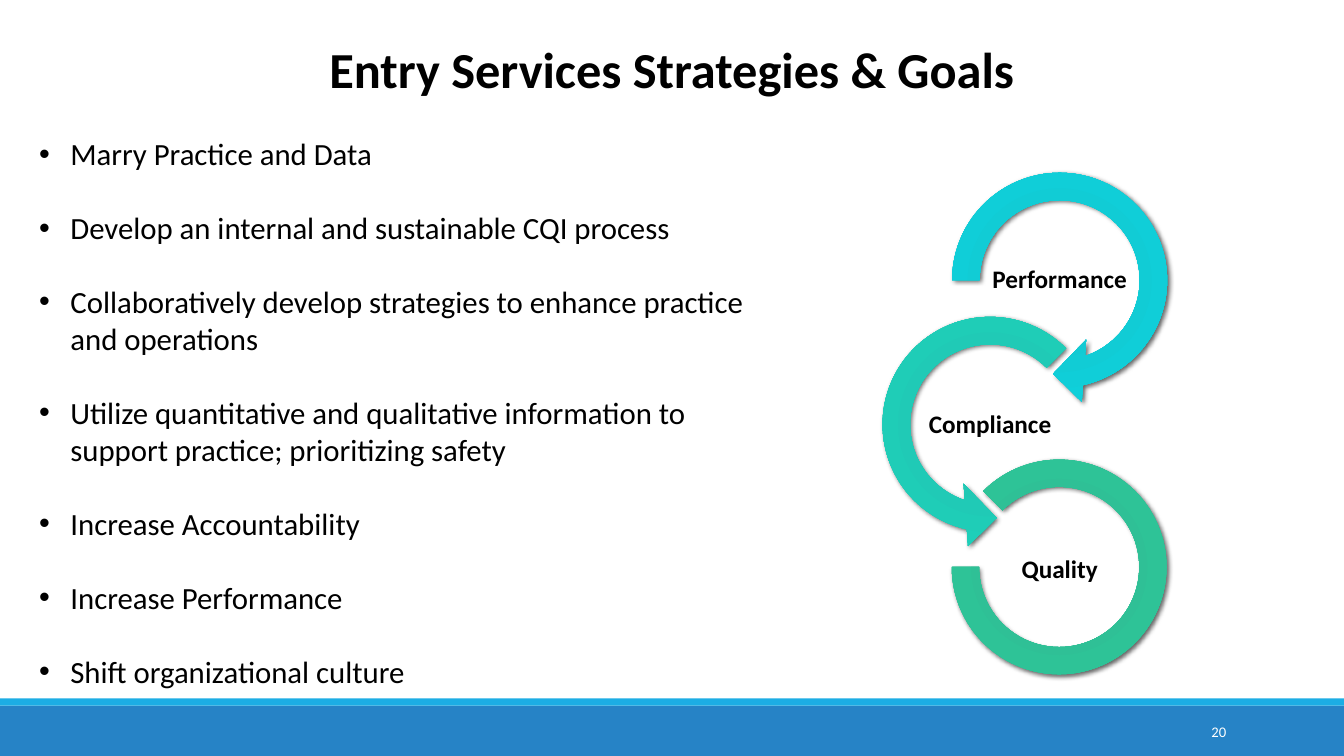
import lxml.etree
import pptx
import pptx.dml.color
import pptx.enum.shapes
import pptx.enum.text
import pptx.oxml.ns
import pptx.util

EMU_PER_PX = 9144
SHAPE = pptx.enum.shapes.MSO_SHAPE
ALIGN = pptx.enum.text.PP_ALIGN
ANCHOR = pptx.enum.text.MSO_ANCHOR

THEME = {
    "font": "Calibri",
    "text": "000000",
    "footer_text": "FFFFFF",
    "footer": "2683C6",
    "footer_edge": "1CADE4",
    "performance": ["0ECBD5", "12CAD3", "0FD0DA", "20CBD4"],
    "compliance": ["1DCAB5", "21C8B4", "1ECFB9", "2ECAB7"],
    "quality": ["2DBE94", "30BD94", "2EC397", "3CC09A"],
    "title_size": 36,
    "bullet_size": 22,
    "label_size": 18,
    "number_size": 10.5,
}


def add_child(parent, tag, **attributes):
    """Append a DrawingML element, turning attribute values into strings."""
    values = {name: str(value) for name, value in attributes.items()}
    return lxml.etree.SubElement(parent, pptx.oxml.ns.qn(tag), values)


def add_text(box, lines, size, color="text", bold=False, bullets=False, frame_format=None, **paragraph_format):
    """Add a text box with one paragraph per line; box is left, top, width, height in px."""
    shape = slide.shapes.add_textbox(*[value * EMU_PER_PX for value in box])
    frame = shape.text_frame
    for name, value in {"word_wrap": True, **(frame_format or {})}.items():
        setattr(frame, name, value)
    for index, line in enumerate(lines):
        paragraph = frame.paragraphs[0] if index == 0 else frame.add_paragraph()
        paragraph.text = line
        if bullets:
            properties = paragraph._p.get_or_add_pPr()
            properties.set("marL", str(31 * EMU_PER_PX))
            properties.set("indent", str(-31 * EMU_PER_PX))
            add_child(properties, "a:buFont", typeface="Arial")
            add_child(properties, "a:buChar", char="•")
        for name, value in paragraph_format.items():
            setattr(paragraph, name, value)
        font_format = {"name": THEME["font"], "size": pptx.util.Pt(THEME[size]), "bold": bold}
        for name, value in font_format.items():
            setattr(paragraph.runs[0].font, name, value)
        paragraph.runs[0].font.color.rgb = pptx.dml.color.RGBColor.from_string(THEME[color])


presentation = pptx.Presentation()
presentation.slide_width = 1333 * EMU_PER_PX
presentation.slide_height = 750 * EMU_PER_PX
slide = presentation.slides.add_slide(presentation.slide_layouts[6])

# Footer
for top, height, color in [(700, 50, "footer"), (693, 7, "footer_edge")]:
    band = slide.shapes.add_shape(SHAPE.RECTANGLE, 0, top * EMU_PER_PX, 1333 * EMU_PER_PX, height * EMU_PER_PX)
    band.fill.solid()
    band.fill.fore_color.rgb = pptx.dml.color.RGBColor.from_string(THEME[color])
    band.line.fill.background()
    band.shadow.inherit = False
add_text((1083, 706, 143, 40), ["20"], "number_size", "footer_text",
         frame_format={"vertical_anchor": ANCHOR.MIDDLE}, alignment=ALIGN.RIGHT)

# Interlocking cycle
cycle = [
    ("Performance", SHAPE.CIRCULAR_ARROW, (927, 154, 248), (0.11, 11.423, 45, 108, 0.125), (982, 244)),
    ("Compliance", SHAPE.LEFT_CIRCULAR_ARROW, (858, 297, 248), (0.11, 11.423, 63, 189, 0.125), (913, 387)),
    ("Quality", SHAPE.BLOCK_ARC, (944, 456, 213), (135, 108, 0.127), (982, 531)),
]
label_frame = {"vertical_anchor": ANCHOR.MIDDLE}
for side in ("left", "top", "right", "bottom"):
    label_frame[f"margin_{side}"] = EMU_PER_PX

for label, kind, (left, top, size), adjustments, label_corner in cycle:
    ring = slide.shapes.add_shape(kind, *[value * EMU_PER_PX for value in (left, top, size, size)])
    for index, value in enumerate(adjustments):
        ring.adjustments[index] = value

    ring.fill.gradient()
    gradient = ring._element.spPr.find(pptx.oxml.ns.qn("a:gradFill"))
    for child in list(gradient):
        gradient.remove(child)
    stops = add_child(gradient, "a:gsLst")
    for position, color in zip((0, 34, 70, 100), THEME[label.lower()]):
        stop = add_child(stops, "a:gs", pos=position * 1000)
        add_child(stop, "a:srgbClr", val=color)
    circle = add_child(gradient, "a:path", path="circle")
    add_child(circle, "a:fillToRect", l=100000, t=100000, r=100000, b=100000)
    ring.line.fill.background()

    ring.shadow.inherit = False
    effects = ring._element.spPr.find(pptx.oxml.ns.qn("a:effectLst"))
    shadow = add_child(effects, "a:outerShdw", blurRad=pptx.util.Pt(3.5), dist=pptx.util.Pt(2),
                       dir=45 * 60000, algn="ctr", rotWithShape=0)
    shadow_color = add_child(shadow, "a:srgbClr", val=THEME["text"])
    add_child(shadow_color, "a:alpha", val=60000)

    add_text((*label_corner, 138, 69), [label], "label_size", bold=True, frame_format=label_frame,
             alignment=ALIGN.CENTER, line_spacing=0.9)

# Strategies and title
strategies = [
    "Marry Practice and Data",
    "Develop an internal and sustainable CQI process",
    "Collaboratively develop strategies to enhance practice and operations",
    "Utilize quantitative and qualitative information to support practice; prioritizing safety",
    "Increase Accountability",
    "Increase Performance",
    "Shift organizational culture",
]
add_text((29, 129, 725, 565), strategies, "bullet_size", bullets=True, space_after=pptx.util.Pt(26.4))
add_text((0, 33, 1333, 71), ["Entry Services Strategies & Goals"], "title_size", bold=True,
         alignment=ALIGN.CENTER)

presentation.save("out.pptx")
